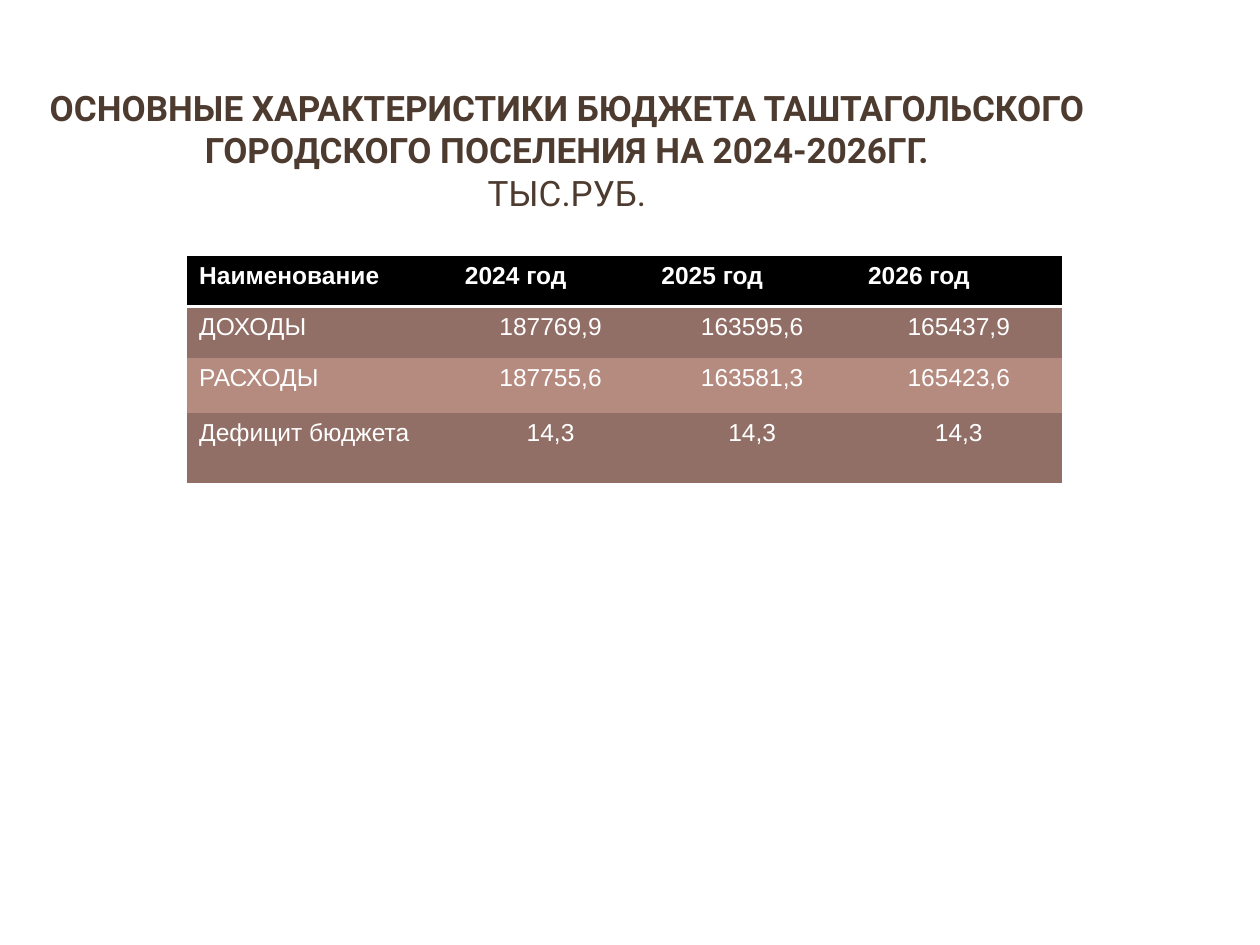
import pptx
import pptx.util
import pptx.dml.color
import pptx.enum.text
import pptx.oxml
import pptx.oxml.ns

Pt = pptx.util.Pt
ALIGN = pptx.enum.text.PP_ALIGN
ANCHOR = pptx.enum.text.MSO_ANCHOR

COLORS = {
    "title": "4E3B30",
    "header": "000000",
    "dark": "916F67",
    "light": "B58B80",
    "white": "FFFFFF",
}
PLAIN_TABLE_STYLE = "{2D5ABB26-0587-4C30-8999-92F81FD0307C}"

BUDGET_ROWS = [
    ("Наименование", "2024 год", "2025 год", "2026 год"),
    ("ДОХОДЫ", "187769,9", "163595,6", "165437,9"),
    ("РАСХОДЫ", "187755,6", "163581,3", "165423,6"),
    ("Дефицит бюджета", "14,3", "14,3", "14,3"),
]
ROW_FILLS = ["header", "dark", "light", "dark"]
COLUMN_WIDTHS = [151.9, 112.3, 118.1, 118.1]
ROW_HEIGHTS = [29.2, 29.2, 31.4, 40]


def rgb(name):
    return pptx.dml.color.RGBColor.from_string(COLORS[name])


def add_text(para, text, *, size, font, color, bold=False, align=ALIGN.LEFT):
    para.alignment = align
    span = para.add_run()
    span.text = text
    span.font.size = Pt(size)
    span.font.name = font
    span.font.bold = bold
    span.font.color.rgb = rgb(color)


def add_bottom_border(cell, color, width):
    border = pptx.oxml.parse_xml(
        f'<a:lnB {pptx.oxml.ns.nsdecls("a")} w="{Pt(width)}"><a:solidFill>'
        f'<a:srgbClr val="{COLORS[color]}"/></a:solidFill></a:lnB>'
    )
    cell._tc.get_or_add_tcPr().insert(0, border)


def build_title(page, left, top, width, height):
    box = page.shapes.add_textbox(Pt(left), Pt(top), Pt(width), Pt(height))
    frame = box.text_frame
    frame.word_wrap = True
    frame.vertical_anchor = ANCHOR.MIDDLE
    para = frame.paragraphs[0]
    style = dict(size=20, font="Roboto", color="title", align=ALIGN.CENTER)
    add_text(
        para,
        "ОСНОВНЫЕ ХАРАКТЕРИСТИКИ БЮДЖЕТА ТАШТАГОЛЬСКОГО "
        "ГОРОДСКОГО ПОСЕЛЕНИЯ НА 2024-2026ГГ.",
        bold=True,
        **style,
    )
    para.add_line_break()
    add_text(para, "ТЫС.РУБ.", **style)


def build_budget_table(page, left, top, width, height):
    frame = page.shapes.add_table(
        len(BUDGET_ROWS), len(COLUMN_WIDTHS), Pt(left), Pt(top), Pt(width), Pt(height)
    )
    table = frame.table
    table._tbl.tblPr.find(pptx.oxml.ns.qn("a:tableStyleId")).text = PLAIN_TABLE_STYLE
    for column, share in zip(table.columns, COLUMN_WIDTHS):
        column.width = Pt(width * share / sum(COLUMN_WIDTHS))
    for row, share in zip(table.rows, ROW_HEIGHTS):
        row.height = Pt(height * share / sum(ROW_HEIGHTS))
    for row_index, values in enumerate(BUDGET_ROWS):
        is_header = row_index == 0
        for column_index, value in enumerate(values):
            cell = table.cell(row_index, column_index)
            cell.fill.solid()
            cell.fill.fore_color.rgb = rgb(ROW_FILLS[row_index])
            is_number = not is_header and column_index > 0
            add_text(
                cell.text_frame.paragraphs[0],
                value,
                size=14,
                font="Arial",
                color="white",
                bold=is_header,
                align=ALIGN.CENTER if is_number else ALIGN.LEFT,
            )
            if is_header:
                add_bottom_border(cell, "white", 2)


def main():
    deck = pptx.Presentation()
    deck.slide_width, deck.slide_height = Pt(720), Pt(540)
    page = deck.slides.add_slide(deck.slide_layouts[6])
    build_title(page, 0, 43.2, 648, 85)
    build_budget_table(page, 106.6, 146.2, sum(COLUMN_WIDTHS), sum(ROW_HEIGHTS))
    deck.save("out.pptx")


if __name__ == "__main__":
    main()
